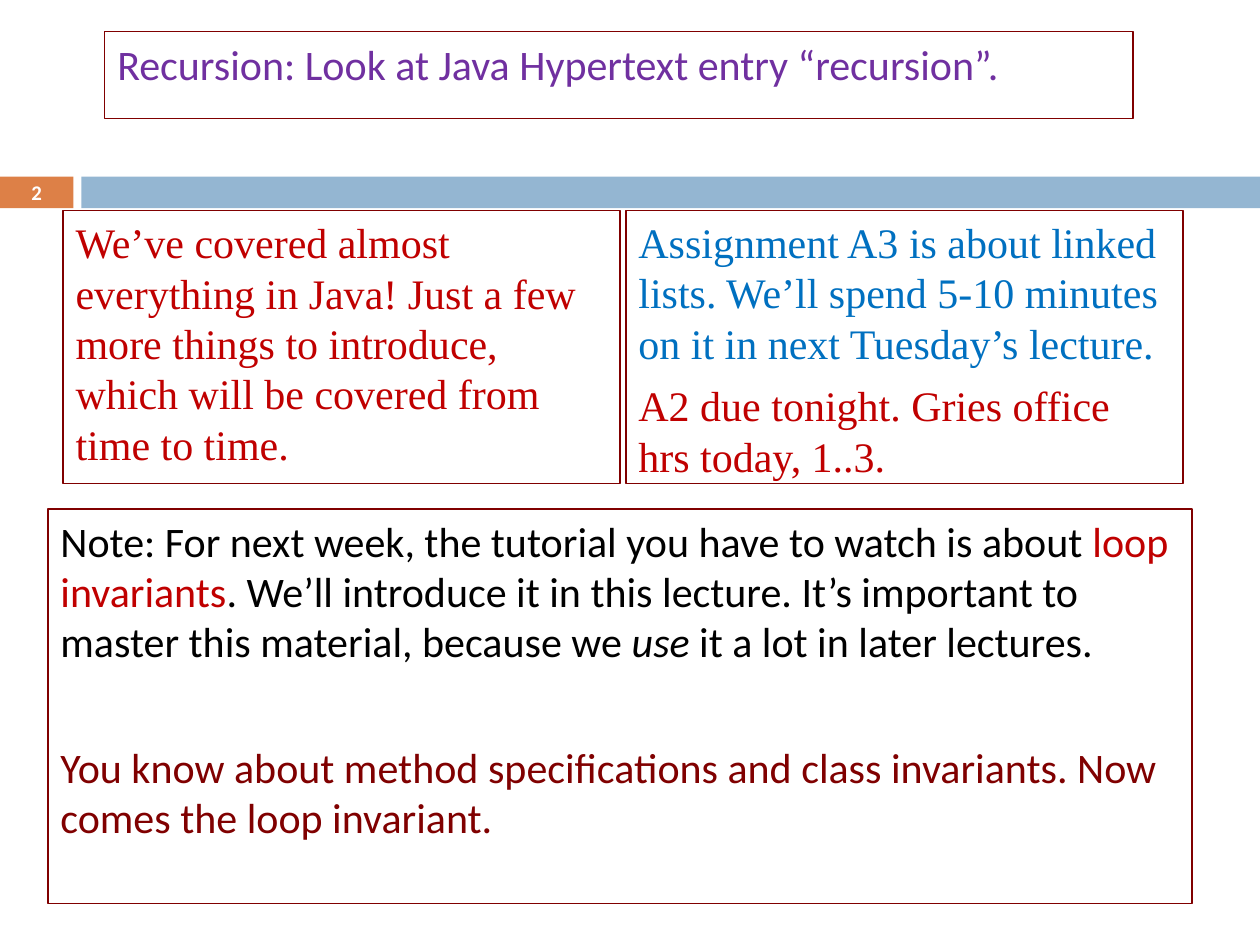
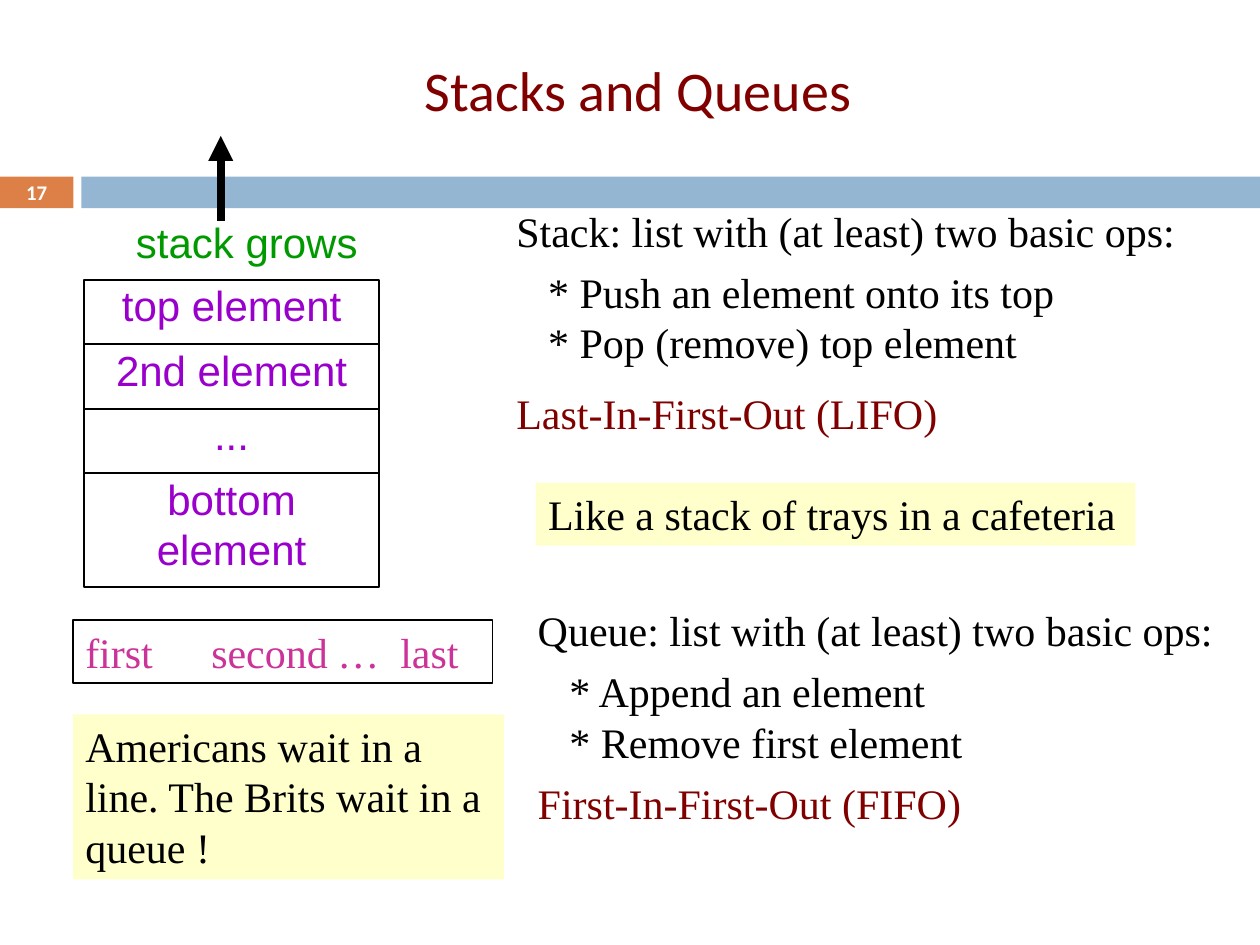
"""Build two lecture slides on recursion notes, stacks and queues."""
import pptx
import pptx.util
import pptx.dml.color
import pptx.enum.shapes
import pptx.enum.text
import pptx.oxml.ns
import lxml.etree

Cm = pptx.util.Cm
Pt = pptx.util.Pt
RGBColor = pptx.dml.color.RGBColor
qn = pptx.oxml.ns.qn
RECTANGLE = pptx.enum.shapes.MSO_SHAPE.RECTANGLE
LEFT = pptx.enum.text.PP_ALIGN.LEFT
CENTER = pptx.enum.text.PP_ALIGN.CENTER
TOP = pptx.enum.text.MSO_ANCHOR.TOP
MIDDLE = pptx.enum.text.MSO_ANCHOR.MIDDLE

WHITE = RGBColor(0xFF, 0xFF, 0xFF)
BLACK = RGBColor(0x00, 0x00, 0x00)
ORANGE = RGBColor(0xDD, 0x80, 0x47)
BAND_BLUE = RGBColor(0x94, 0xB6, 0xD2)
MAROON = RGBColor(0x80, 0x00, 0x00)
RED = RGBColor(0xC0, 0x00, 0x00)
BLUE = RGBColor(0x00, 0x70, 0xC0)
VIOLET = RGBColor(0x70, 0x30, 0xA0)
PURPLE = RGBColor(0x99, 0x00, 0xCC)
GREEN = RGBColor(0x00, 0x99, 0x00)
PINK = RGBColor(0xCC, 0x33, 0x99)
CREAM = RGBColor(0xFF, 0xFF, 0xCC)

SANS = "Calibri"
SERIF = "Times New Roman"
STACK_FONT = "Arial"
ITEM_INDENT = Cm(0.64)


def write(box, font, paragraphs, size=24, align=LEFT, anchor=TOP):
    """Fill a box from (space before, indent, runs) paragraphs; a run is (text, colour, italic)."""
    frame = box.text_frame
    frame.word_wrap = True
    frame.auto_size = pptx.enum.text.MSO_AUTO_SIZE.NONE
    frame.vertical_anchor = anchor
    for index, (before, indent, runs) in enumerate(paragraphs):
        para = frame.paragraphs[0] if index == 0 else frame.add_paragraph()
        para.alignment = align
        para.space_before = Pt(before)
        para.line_spacing = Pt(size * 1.2)
        properties = para._p.get_or_add_pPr()
        properties.set("marL", str(indent))
        properties.set("indent", "0")
        lxml.etree.SubElement(properties, qn("a:buNone"))
        for text, color, italic in runs:
            span = para.add_run()
            span.text = text
            span.font.name = font
            span.font.size = Pt(size)
            span.font.color.rgb = color
            span.font.italic = italic


def add_box(page, place, fill=None, line=None, width=0.75):
    """Add a flat rectangle at (left, top, width, height) in centimetres."""
    box = page.shapes.add_shape(RECTANGLE, *[Cm(length) for length in place])
    box.shadow.inherit = False
    if fill is None:
        box.fill.background()
    else:
        box.fill.solid()
        box.fill.fore_color.rgb = fill
    if line is None:
        box.line.fill.background()
    else:
        box.line.color.rgb = line
        box.line.width = Pt(width)
    return box


deck = pptx.Presentation()
deck.slide_width = Cm(25.4)
deck.slide_height = Cm(19.05)
news = deck.slides.add_slide(deck.slide_layouts[1])
stacks = deck.slides.add_slide(deck.slide_layouts[5])

for page, number, title_place in (
    (news, "2", (2.11, 0.64, 20.73, 1.75)),
    (stacks, "17", (1.37, 0.84, 22.99, 1.9)),
):
    tag = add_box(page, (0, 3.56, 1.48, 0.64), ORANGE)
    tag.text_frame.margin_top = tag.text_frame.margin_bottom = 0
    write(tag, SANS, [(0, 0, [(number, WHITE, False)])], 11.9, CENTER, MIDDLE)
    tag.text_frame.paragraphs[0].runs[0].font.bold = True
    add_box(page, (1.64, 3.56, 23.76, 0.64), BAND_BLUE)
    title = page.shapes.title
    title.left, title.top, title.width, title.height = [Cm(length) for length in title_place]

covered = news.placeholders[1]
covered.left, covered.top, covered.width, covered.height = Cm(1.27), Cm(4.24), Cm(11.23), Cm(5.51)
for box in (news.shapes.title, covered):
    box.fill.solid()
    box.fill.fore_color.rgb = WHITE
    box.line.color.rgb = MAROON
    box.line.width = Pt(0.75)
write(news.shapes.title, SANS,
      [(7, 0, [("Recursion: Look at Java Hypertext entry “recursion”.", VIOLET, False)])])
write(covered, SERIF, [(7, 0, [(
    "We’ve covered almost everything in Java! Just a few more things to introduce, "
    "which will be covered from time to time.", RED, False)])])

note = add_box(news, (0.97, 10.26, 23.06, 7.95), WHITE, MAROON)
write(note, SANS, [
    (7, 0, [
        ("Note: For next week, the tutorial you have to watch is about ", BLACK, False),
        ("loop invariants", RED, False),
        (". We’ll introduce it in this lecture. It’s important to master this material, "
         "because we ", BLACK, False),
        ("use ", BLACK, True),
        ("it a lot in later lectures.", BLACK, False),
    ]),
    (43, 0, [("You know about method specifications and class invariants. "
              "Now comes the loop invariant.", MAROON, False)]),
])

assignments = add_box(news, (12.62, 4.24, 11.23, 5.51), WHITE, MAROON)
write(assignments, SERIF, [
    (7, 0, [("Assignment A3 is about linked lists. We’ll spend 5-10 minutes on it "
             "in next Tuesday’s lecture.", BLUE, False)]),
    (7, 0, [("A2 due tonight. Gries office hrs today, 1..3.", RED, False)]),
])

write(stacks.shapes.title, SANS, [(0, 0, [("Stacks and Queues", MAROON, False)])],
      32, CENTER, MIDDLE)

cell_top = 5.64
for text, height in (("top element", 1.3), ("2nd element", 1.3), ("...", 1.3),
                     ("bottom element", 2.29)):
    cell = add_box(stacks, (1.7, cell_top, 5.94, height), None, BLACK, 1)
    cell.text_frame.margin_left = cell.text_frame.margin_right = Cm(0.1)
    cell.text_frame.margin_top = cell.text_frame.margin_bottom = 0
    write(cell, STACK_FONT, [(0, 0, [(text, PURPLE, False)])], align=CENTER)
    cell_top += height

growth = stacks.shapes.add_textbox(Cm(2.74), Cm(4.37), Cm(4.78), Cm(1.02))
growth.text_frame.margin_left = growth.text_frame.margin_top = growth.text_frame.margin_bottom = 0
write(growth, STACK_FONT, [(0, 0, [("stack grows", GREEN, False)])])

arrow = stacks.shapes.add_connector(
    pptx.enum.shapes.MSO_CONNECTOR.STRAIGHT, Cm(4.45), Cm(4.45), Cm(4.45), Cm(2.74))
arrow.line.color.rgb = BLACK
arrow.line.width = Pt(4.75)
lxml.etree.SubElement(arrow.line._get_or_add_ln(), qn("a:tailEnd"), type="triangle")
lxml.etree.SubElement(arrow._element.spPr, qn("a:effectLst"))

for place, name, operations, policy, gap in (
    ((10.16, 4.01, 14.9, 5), "Stack",
     ("* Push an element onto its top", "* Pop (remove) top element"),
     "Last-In-First-Out (LIFO)", 12),
    ((10.59, 12.07, 14.4, 4.78), "Queue",
     ("* Append an element", "* Remove first element"),
     "First-In-First-Out (FIFO)", 6),
):
    summary = stacks.shapes.add_textbox(*[Cm(length) for length in place])
    write(summary, SERIF, [
        (0, 0, [(name + ": list with (at least) two basic ops:", BLACK, False)]),
        (6, ITEM_INDENT, [(operations[0], BLACK, False)]),
        (0, ITEM_INDENT, [(operations[1], BLACK, False)]),
        (gap, 0, [(policy, MAROON, False)]),
    ])

for place, text in (
    ((10.8, 9.73, 12.09, 1.27), "Like a stack of trays in a cafeteria"),
    ((1.47, 14.4, 8.69, 3.33), "Americans wait in a line. The Brits wait in a queue !"),
):
    remark = add_box(stacks, place, CREAM)
    write(remark, SERIF, [(0, 0, [(text, BLACK, False)])])

queue = add_box(stacks, (1.47, 12.5, 8.46, 1.27), None, BLACK)
write(queue, SERIF, [(0, 0, [("first\tsecond\t…\tlast", PINK, False)])])
tabs = lxml.etree.SubElement(queue.text_frame.paragraphs[0]._p.pPr, qn("a:tabLst"))
for position in (2.2, 5.22, 6.67):
    lxml.etree.SubElement(tabs, qn("a:tab"), pos=str(Cm(position)), algn="l")

deck.save("out.pptx")
